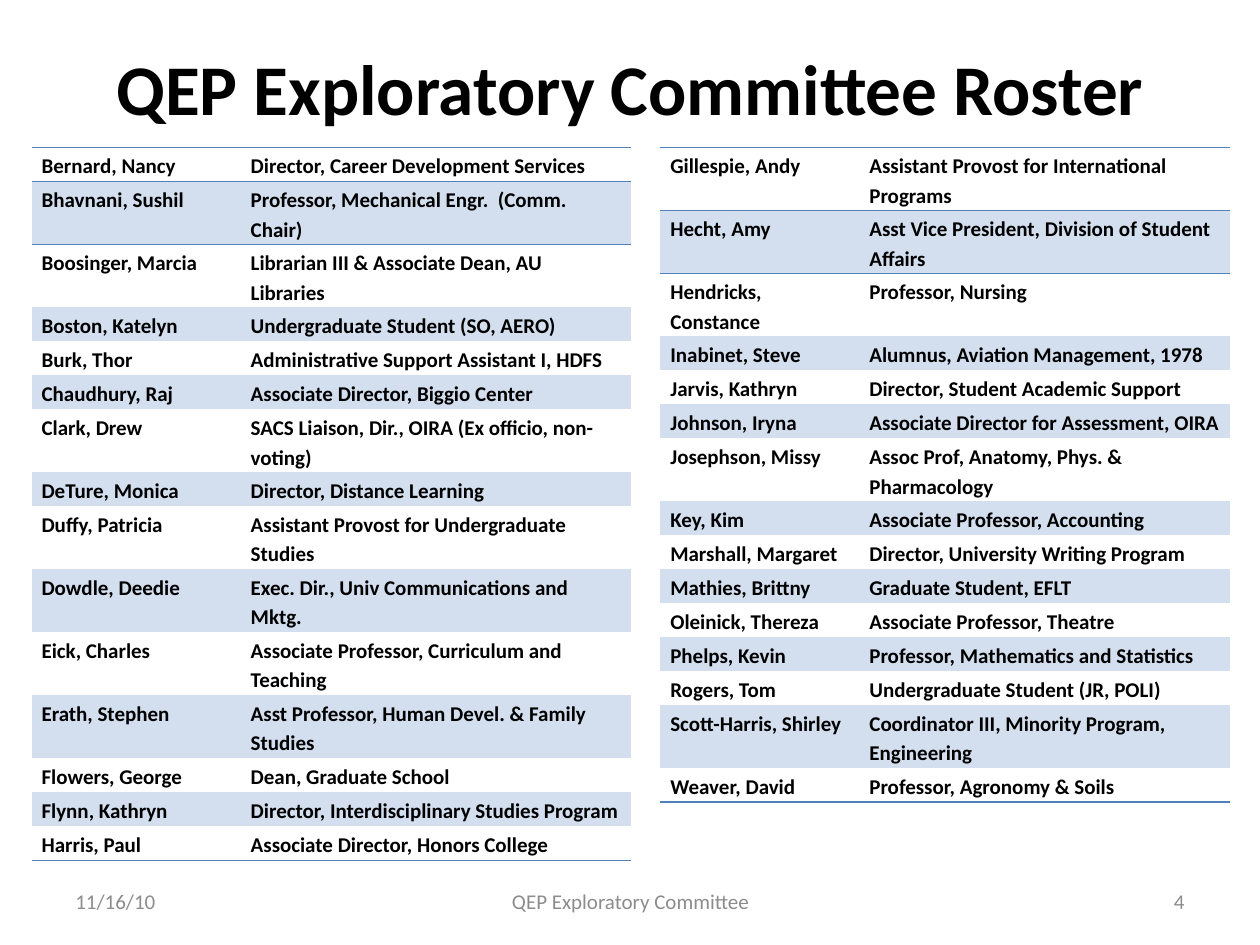
"""Build the QEP Exploratory Committee roster slide."""
from dataclasses import dataclass

import pptx
import pptx.dml.color
import pptx.enum.text
import pptx.oxml
import pptx.oxml.ns
import pptx.util

Inches = pptx.util.Inches
Align = pptx.enum.text.PP_ALIGN
Anchor = pptx.enum.text.MSO_ANCHOR

WIDTH, HEIGHT = Inches(10), Inches(7.5)
COLORS = {"ink": "000000", "footer": "8C8C8C", "band": "D3DFEE", "rule": "4F81BD"}
PLAIN_TABLE_STYLE = "{2D5ABB26-0587-4C30-8999-92F81FD0307C}"
ROW_HEIGHTS = {1: Inches(0.27), 2: Inches(0.5)}
ROSTER_TOP = 0.156


@dataclass(frozen=True)
class Member:
    name: str
    role: str
    lines: int = 1


@dataclass(frozen=True)
class Roster:
    left: float
    columns: tuple[float, float]
    members: tuple[Member, ...]


@dataclass(frozen=True)
class FooterItem:
    text: str
    left: float
    width: float
    align: Align


ROSTERS = (
    Roster(0.025, (0.166, 0.31), (
        Member("Bernard, Nancy", "Director, Career Development Services"),
        Member("Bhavnani, Sushil", "Professor, Mechanical Engr.  (Comm. Chair)", 2),
        Member("Boosinger, Marcia", "Librarian III & Associate Dean, AU Libraries", 2),
        Member("Boston, Katelyn", "Undergraduate Student (SO, AERO)"),
        Member("Burk, Thor", "Administrative Support Assistant I, HDFS"),
        Member("Chaudhury, Raj", "Associate Director, Biggio Center"),
        Member("Clark, Drew", "SACS Liaison, Dir., OIRA (Ex officio, non-voting)", 2),
        Member("DeTure, Monica", "Director, Distance Learning"),
        Member("Duffy, Patricia", "Assistant Provost for Undergraduate Studies", 2),
        Member("Dowdle, Deedie", "Exec. Dir., Univ Communications and Mktg.", 2),
        Member("Eick, Charles", "Associate Professor, Curriculum and Teaching", 2),
        Member("Erath, Stephen", "Asst Professor, Human Devel. & Family Studies", 2),
        Member("Flowers, George", "Dean, Graduate School"),
        Member("Flynn, Kathryn", "Director, Interdisciplinary Studies Program"),
        Member("Harris, Paul", "Associate Director, Honors College"),
    )),
    Roster(0.524, (0.158, 0.294), (
        Member("Gillespie, Andy", "Assistant Provost for International Programs", 2),
        Member("Hecht, Amy", "Asst Vice President, Division of Student Affairs", 2),
        Member("Hendricks, Constance", "Professor, Nursing", 2),
        Member("Inabinet, Steve", "Alumnus, Aviation Management, 1978"),
        Member("Jarvis, Kathryn", "Director, Student Academic Support"),
        Member("Johnson, Iryna", "Associate Director for Assessment, OIRA"),
        Member("Josephson, Missy", "Assoc Prof, Anatomy, Phys. & Pharmacology", 2),
        Member("Key, Kim", "Associate Professor, Accounting"),
        Member("Marshall, Margaret", "Director, University Writing Program"),
        Member("Mathies, Brittny", "Graduate Student, EFLT"),
        Member("Oleinick, Thereza", "Associate Professor, Theatre"),
        Member("Phelps, Kevin", "Professor, Mathematics and Statistics"),
        Member("Rogers, Tom", "Undergraduate Student (JR, POLI)"),
        Member("Scott-Harris, Shirley", "Coordinator III, Minority Program, Engineering", 2),
        Member("Weaver, David", "Professor, Agronomy & Soils"),
    )),
)
FOOTER = (
    FooterItem("11/16/10", 0.05, 0.233, Align.LEFT),
    FooterItem("QEP Exploratory Committee", 0.342, 0.317, Align.CENTER),
    FooterItem("4", 0.717, 0.233, Align.RIGHT),
)


def across(share: float) -> int:
    """Return a share of the slide width."""
    return round(WIDTH * share)


def down(share: float) -> int:
    """Return a share of the slide height."""
    return round(HEIGHT * share)


def rgb(role: str) -> pptx.dml.color.RGBColor:
    """Return the colour that plays the given role."""
    return pptx.dml.color.RGBColor.from_string(COLORS[role])


def write(frame, text: str, *, size: float = 12, color: str = "ink", bold: bool = False,
          align: Align = Align.LEFT, spacing: float = 1.0) -> None:
    """Put one formatted paragraph in a text frame."""
    frame.word_wrap = True
    paragraph = frame.paragraphs[0]
    paragraph.alignment, paragraph.line_spacing = align, spacing
    run = paragraph.add_run()
    run.text = text
    run.font.name, run.font.size, run.font.bold = "Calibri", pptx.util.Pt(size), bold
    run.font.color.rgb = rgb(color)


def rule_cell(cell, edge: str) -> None:
    """Draw a one-point rule along a cell edge, lnT or lnB."""
    cell._tc.get_or_add_tcPr().append(pptx.oxml.parse_xml(
        f'<a:{edge} {pptx.oxml.ns.nsdecls("a")} w="12700"><a:solidFill>'
        f'<a:srgbClr val="{COLORS["rule"]}"/></a:solidFill></a:{edge}>'))


def draw_roster(slide, roster: Roster) -> None:
    """Draw one banded table of committee members."""
    members = roster.members
    heights = [ROW_HEIGHTS[member.lines] for member in members]
    table = slide.shapes.add_table(
        len(members), 2, across(roster.left), down(ROSTER_TOP),
        across(sum(roster.columns)), sum(heights)).table
    table.first_row = table.horz_banding = False
    table._tbl.tblPr.find(pptx.oxml.ns.qn("a:tableStyleId")).text = PLAIN_TABLE_STYLE
    for column, share in zip(table.columns, roster.columns):
        column.width = across(share)
    for index, (row, member) in enumerate(zip(table.rows, members)):
        row.height = heights[index]
        for cell, text in zip(row.cells, (member.name, member.role)):
            cell.margin_left = cell.margin_right = Inches(0.08)
            cell.margin_top = cell.margin_bottom = Inches(0.02)
            write(cell.text_frame, text, bold=True, spacing=1.15)
            if index in (0, 1):
                rule_cell(cell, "lnT")
            if index in (0, len(members) - 1):
                rule_cell(cell, "lnB")
            if index % 2:
                cell.fill.solid()
                cell.fill.fore_color.rgb = rgb("band")
            else:
                cell.fill.background()


def draw_footer(slide, item: FooterItem) -> None:
    """Draw one item of the footer line."""
    box = slide.shapes.add_textbox(
        across(item.left), down(0.927), across(item.width), down(0.053))
    box.text_frame.vertical_anchor = Anchor.MIDDLE
    write(box.text_frame, item.text, color="footer", align=item.align)


def draw_title(slide, text: str) -> None:
    """Place and format the title placeholder."""
    title = slide.shapes.title
    title.left, title.top = across(0.05), down(0.04)
    title.width, title.height = across(0.9), down(0.167)
    title.text_frame.auto_size = pptx.enum.text.MSO_AUTO_SIZE.NONE
    title.text_frame.vertical_anchor = Anchor.TOP
    write(title.text_frame, text, size=40.7, bold=True, align=Align.CENTER)


def main() -> None:
    """Build and save the slide."""
    deck = pptx.Presentation()
    deck.slide_width, deck.slide_height = WIDTH, HEIGHT
    slide = deck.slides.add_slide(deck.slide_layouts[5])
    for item in FOOTER:
        draw_footer(slide, item)
    for roster in ROSTERS:
        draw_roster(slide, roster)
    draw_title(slide, "QEP Exploratory Committee Roster")
    deck.save("out.pptx")


if __name__ == "__main__":
    main()
